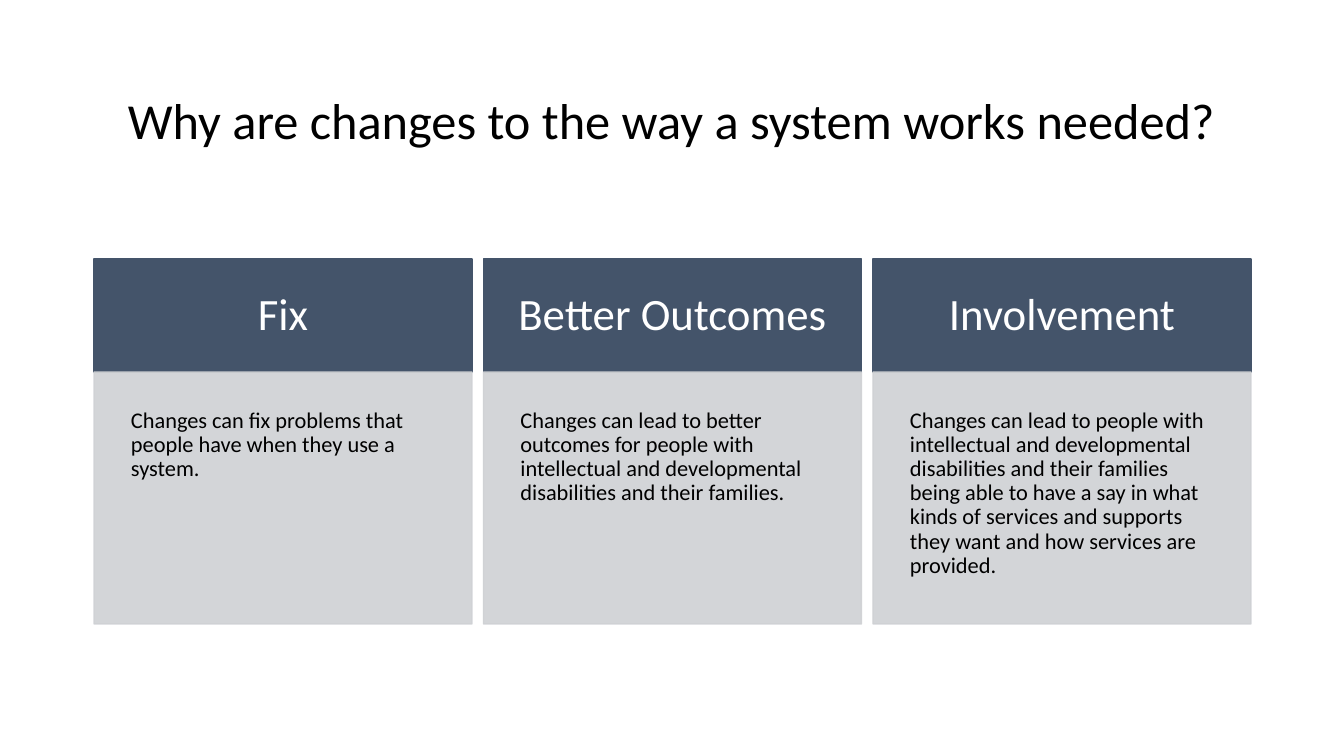
import dataclasses

import lxml.etree
import pptx
import pptx.dml.color
import pptx.enum.shapes
import pptx.enum.text
import pptx.oxml.ns
import pptx.util

PX = 914400 / 100.8
ALIGN = pptx.enum.text.PP_ALIGN
ANCHOR = pptx.enum.text.MSO_ANCHOR


@dataclasses.dataclass(frozen=True)
class Theme:
    font: str = "Calibri"
    title_size: int = 36
    header_size: int = 32
    body_size: int = 16
    ink: str = "000000"
    header_ink: str = "FFFFFF"
    header_fill: str = "44546A"
    body_fill: str = "CFD1D4"
    body_opacity: int = 90


theme = Theme()


def write(shape, words, size, color, align, anchor, inset):
    """Fill a shape with one paragraph; inset is (horizontal, vertical) in px."""
    frame = shape.text_frame
    frame.word_wrap = True
    frame.vertical_anchor = anchor
    frame.margin_left = frame.margin_right = round(inset[0] * PX)
    frame.margin_top = frame.margin_bottom = round(inset[1] * PX)
    paragraph = frame.paragraphs[0]
    paragraph.alignment = align
    paragraph.line_spacing = 0.9
    run = paragraph.add_run()
    run.text = words
    run.font.name = theme.font
    run.font.size = pptx.util.Pt(size)
    run.font.color.rgb = pptx.dml.color.RGBColor.from_string(color)


def add_panel(slide, box, color, opacity=100):
    """Add a rectangle whose fill and outline share a colour and opacity."""
    panel = slide.shapes.add_shape(
        pptx.enum.shapes.MSO_SHAPE.RECTANGLE, *(round(n * PX) for n in box))
    panel.shadow.inherit = False
    panel.line.width = pptx.util.Pt(1)
    for paint in (panel.fill, panel.line.fill):
        paint.solid()
        paint.fore_color.rgb = pptx.dml.color.RGBColor.from_string(color)
    if opacity < 100:
        properties = panel.element.spPr
        for swatch in properties.iter(pptx.oxml.ns.qn("a:srgbClr")):
            alpha = lxml.etree.SubElement(swatch, pptx.oxml.ns.qn("a:alpha"))
            alpha.set("val", str(opacity * 1000))
    return panel


deck = pptx.Presentation()
deck.slide_width = round(1344 * PX)
deck.slide_height = round(756 * PX)
slide = deck.slides.add_slide(deck.slide_layouts[6])

title = slide.shapes.add_textbox(*(round(n * PX) for n in (92, 61, 1159, 125)))
write(title, "Why are changes to the way a system works needed?",
      theme.title_size, theme.ink, ALIGN.CENTER, ANCHOR.MIDDLE, (10, 5))

reasons = [
    ("Fix", "Changes can fix problems that people have when they use a system."),
    ("Better Outcomes",
     "Changes can lead to better outcomes for people with intellectual and "
     "developmental disabilities and their families."),
    ("Involvement",
     "Changes can lead to people with intellectual and developmental "
     "disabilities and their families being able to have a say in what kinds "
     "of services and supports they want and how services are provided."),
]
row_left, row_right, column_width = 94, 1251, 378
header_top, header_height, body_height = 259, 113, 252
pitch = (row_right - row_left - column_width) / (len(reasons) - 1)

for index, (heading, explanation) in enumerate(reasons):
    left = row_left + index * pitch
    header = add_panel(slide, (left, header_top, column_width, header_height),
                       theme.header_fill)
    write(header, heading, theme.header_size, theme.header_ink,
          ALIGN.CENTER, ANCHOR.MIDDLE, (30, 30))
    body = add_panel(
        slide, (left, header_top + header_height, column_width, body_height),
        theme.body_fill, theme.body_opacity)
    write(body, explanation, theme.body_size, theme.ink,
          ALIGN.LEFT, ANCHOR.TOP, (37, 37))

deck.save("out.pptx")
